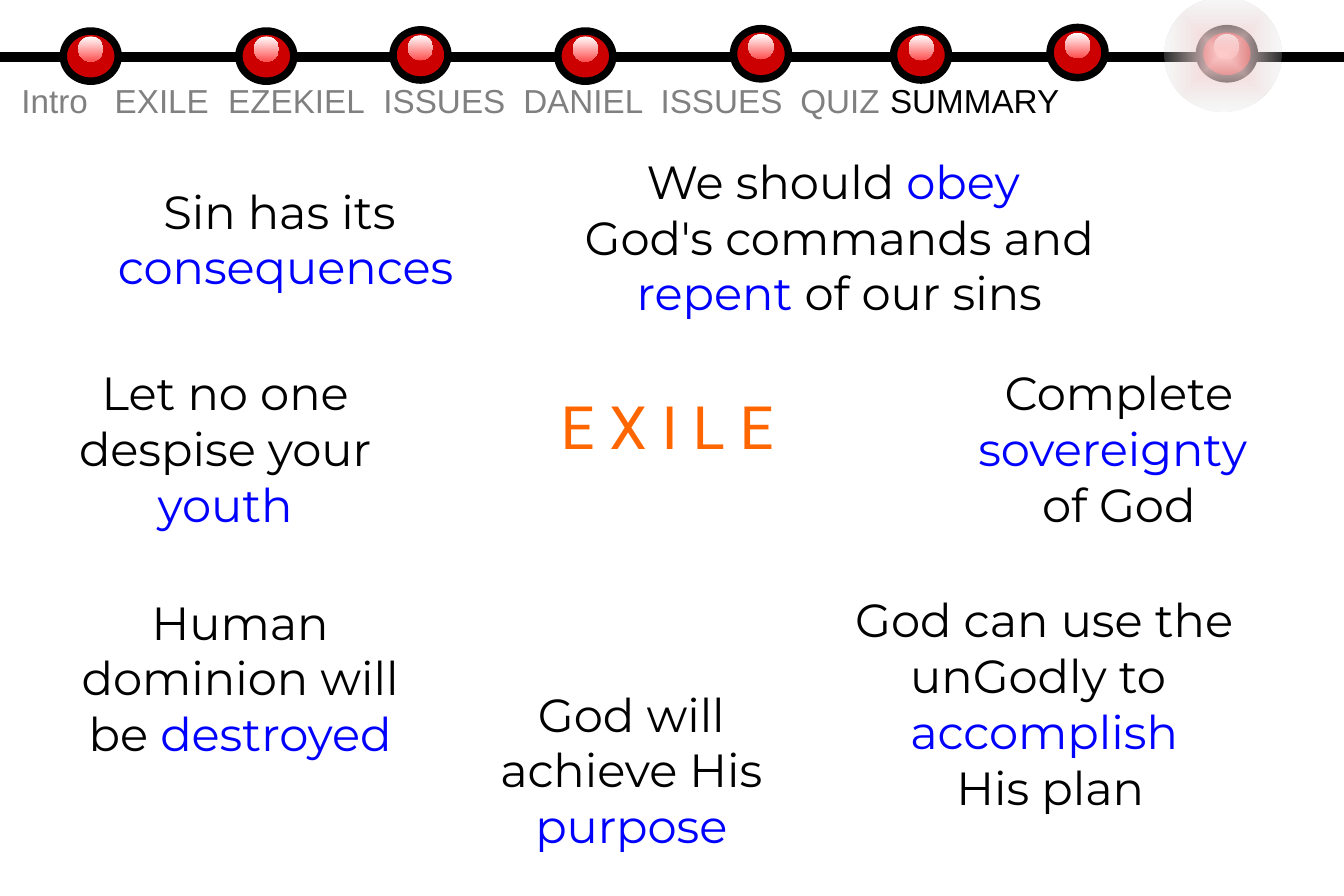
from dataclasses import dataclass

from lxml.etree import SubElement
from pptx import Presentation
from pptx.dml.color import RGBColor as RGB
from pptx.enum.shapes import MSO_CONNECTOR as Connector, MSO_SHAPE as Shape
from pptx.enum.text import MSO_ANCHOR as Anchor, MSO_AUTO_SIZE as AutoSize, PP_ALIGN as Align
from pptx.oxml import parse_xml
from pptx.oxml.ns import nsdecls, qn
from pptx.util import Emu, Inches, Pt

COLS, ROWS = 45, 30
UNIT = Inches(0.25)


@dataclass(frozen=True)
class Theme:
    ink: RGB = RGB(0, 0, 0)
    muted: RGB = RGB(0x80, 0x80, 0x80)
    accent: RGB = RGB(0, 0, 0xFF)
    title: RGB = RGB(0xFF, 0x66, 0)
    bead: RGB = RGB(0xCC, 0, 0)
    shine: tuple[RGB, RGB] = (RGB(0xFF, 0xFF, 0xFF), RGB(0xFF, 0x50, 0x50))
    glow_inner: str = "FFCCCC"
    glow_outer: str = "DDDDDD"
    nav_font: str = "Arial"
    body_font: str = "Montserrat"
    title_font: str = "Roboto"
    nav_size: Pt = Pt(20)
    body_size: Pt = Pt(28)
    title_size: Pt = Pt(36)


@dataclass(frozen=True)
class Box:
    """A place on the grid, in columns and rows."""
    col: float
    row: float
    cols: float
    rows: float

    def emu(self) -> tuple[Emu, ...]:
        return tuple(Emu(round(v * UNIT)) for v in (self.col, self.row, self.cols, self.rows))


@dataclass(frozen=True)
class Lesson:
    """Paragraphs of one lesson; asterisks enclose the accented words."""
    box: Box
    paragraphs: tuple[str, ...]
    wrap: bool = True


@dataclass(frozen=True)
class Stop:
    label: str
    tab: float  # columns from the first label


THEME = Theme()
TITLE_BOX = Box(13.92, 12.84, 16.84, 6.48)
NAV_BOX = Box(0, 2.48, COLS, 1.8)
GLOW_BOX = Box(39, -0.08, 3.92, 3.8)
LINE_ROW = 1.92
NAV_INSET = 0.72

BEADS = [(2.12, 1.04), (8, 1.04), (13.16, 1), (18.68, 1.04),
         (24.56, 0.96), (29.92, 1), (35.16, 0.92), (40.16, 0.96)]

STOPS = [Stop("Intro", 0), Stop("EXILE", 3.12), Stop("EZEKIEL", 6.92),
         Stop("ISSUES", 12.12), Stop("DANIEL", 16.8), Stop("ISSUES", 21.4),
         Stop("QUIZ", 26.08), Stop("SUMMARY", 29.08)]

LESSONS = [
    Lesson(Box(2.96, 5.92, 13.2, 4.16), ("Sin has its ", "*consequences*"), wrap=False),
    Lesson(Box(17.16, 4.92, 21.88, 6.04),
           ("We should *obey *", "God's commands and *repent *of our sins")),
    Lesson(Box(29.92, 12, 15.08, 6.04), ("Complete *sovereignty *", "of God")),
    Lesson(Box(26.32, 19.6, 17.28, 7.96),
           ("God can use the unGodly to ", "*accomplish*", " His plan")),
    Lesson(Box(15.04, 22.76, 12.2, 6.04), ("God will achieve His *purpose*",)),
    Lesson(Box(1.88, 19.68, 12.32, 6.04), ("Human dominion will be *destroyed*",)),
    Lesson(Box(0, 12, 15.08, 6.04), ("Let no one despise your *youth*",)),
]


def set_font(p, name: str, size: Pt, color: RGB) -> None:
    p.font.name, p.font.size = name, size
    p.font.color.rgb = color


def add_oval(shapes, box: Box):
    sp = shapes.add_shape(Shape.OVAL, *box.emu())
    sp.shadow.inherit = False
    sp.line.fill.background()
    return sp


def add_timeline(s) -> None:
    y = round(LINE_ROW * UNIT)
    line = s.shapes.add_connector(Connector.STRAIGHT, 0, y, COLS * UNIT, y)
    line.line.color.rgb = THEME.ink
    line.line.width = Pt(6)
    SubElement(line._element.spPr, qn("a:effectLst"))


def add_bead(s, col: float, row: float) -> None:
    group = s.shapes.add_group_shape()
    ball = add_oval(group.shapes, Box(col, row, 1.84, 1.68))
    ball.fill.solid()
    ball.fill.fore_color.rgb = THEME.bead
    ball.line.color.rgb = THEME.ink
    ball.line.width = Pt(4.5)
    shine = add_oval(group.shapes, Box(col + 0.5, row + 0.18, 0.84, 0.84))
    shine.fill.gradient()
    shine.fill.gradient_angle = 270
    for stop, color in zip(shine.fill.gradient_stops, THEME.shine):
        stop.color.rgb = color


def add_glow(s) -> None:
    """Translucent halo over the current bead."""
    sp = add_oval(s.shapes, GLOW_BOX)
    gradient = parse_xml(
        f'<a:gradFill {nsdecls("a")} rotWithShape="1"><a:gsLst>'
        f'<a:gs pos="0"><a:srgbClr val="{THEME.glow_inner}"/></a:gs>'
        f'<a:gs pos="100000"><a:srgbClr val="{THEME.glow_outer}">'
        '<a:alpha val="20000"/></a:srgbClr></a:gs></a:gsLst>'
        '<a:path path="shape"><a:fillToRect l="50000" t="50000" r="50000" b="50000"/></a:path>'
        '</a:gradFill>')
    sp._element.spPr.find(qn("a:prstGeom")).addnext(gradient)


def add_nav(s) -> None:
    tf = s.shapes.add_textbox(*NAV_BOX.emu()).text_frame
    tf.word_wrap = True
    tf.margin_left = round(NAV_INSET * UNIT)
    p = tf.paragraphs[0]
    tabs = SubElement(p._p.get_or_add_pPr(), qn("a:tabLst"))
    for stop in STOPS[1:]:
        SubElement(tabs, qn("a:tab"), pos=str(round(stop.tab * UNIT)), algn="l")
    set_font(p, THEME.nav_font, THEME.nav_size, THEME.muted)
    *done, current = [stop.label for stop in STOPS]
    p.add_run().text = "\t".join(done) + "\t"
    r = p.add_run()
    r.text = current
    r.font.color.rgb = THEME.ink


def add_title(s) -> None:
    title = s.shapes.title
    title.left, title.top, title.width, title.height = TITLE_BOX.emu()
    tf = title.text_frame
    tf.text = "E X I L E"
    tf.word_wrap = False
    tf.auto_size = AutoSize.NONE
    tf.vertical_anchor = Anchor.TOP
    p = tf.paragraphs[0]
    p.alignment = Align.CENTER
    set_font(p, THEME.title_font, THEME.title_size, THEME.title)


def add_lesson(s, lesson: Lesson) -> None:
    tf = s.shapes.add_textbox(*lesson.box.emu()).text_frame
    tf.word_wrap = lesson.wrap
    for i, text in enumerate(lesson.paragraphs):
        p = tf.add_paragraph() if i else tf.paragraphs[0]
        p.alignment = Align.CENTER
        set_font(p, THEME.body_font, THEME.body_size, THEME.ink)
        for j, part in enumerate(text.split("*")):
            if part:
                r = p.add_run()
                r.text = part
                if j % 2:
                    r.font.color.rgb = THEME.accent


def main() -> None:
    prs = Presentation()
    prs.slide_width, prs.slide_height = COLS * UNIT, ROWS * UNIT
    s = prs.slides.add_slide(prs.slide_layouts[5])
    add_timeline(s)
    for col, row in BEADS:
        add_bead(s, col, row)
    add_nav(s)
    add_glow(s)
    add_title(s)
    for lesson in LESSONS:
        add_lesson(s, lesson)
    prs.save("out.pptx")


if __name__ == "__main__":
    main()
